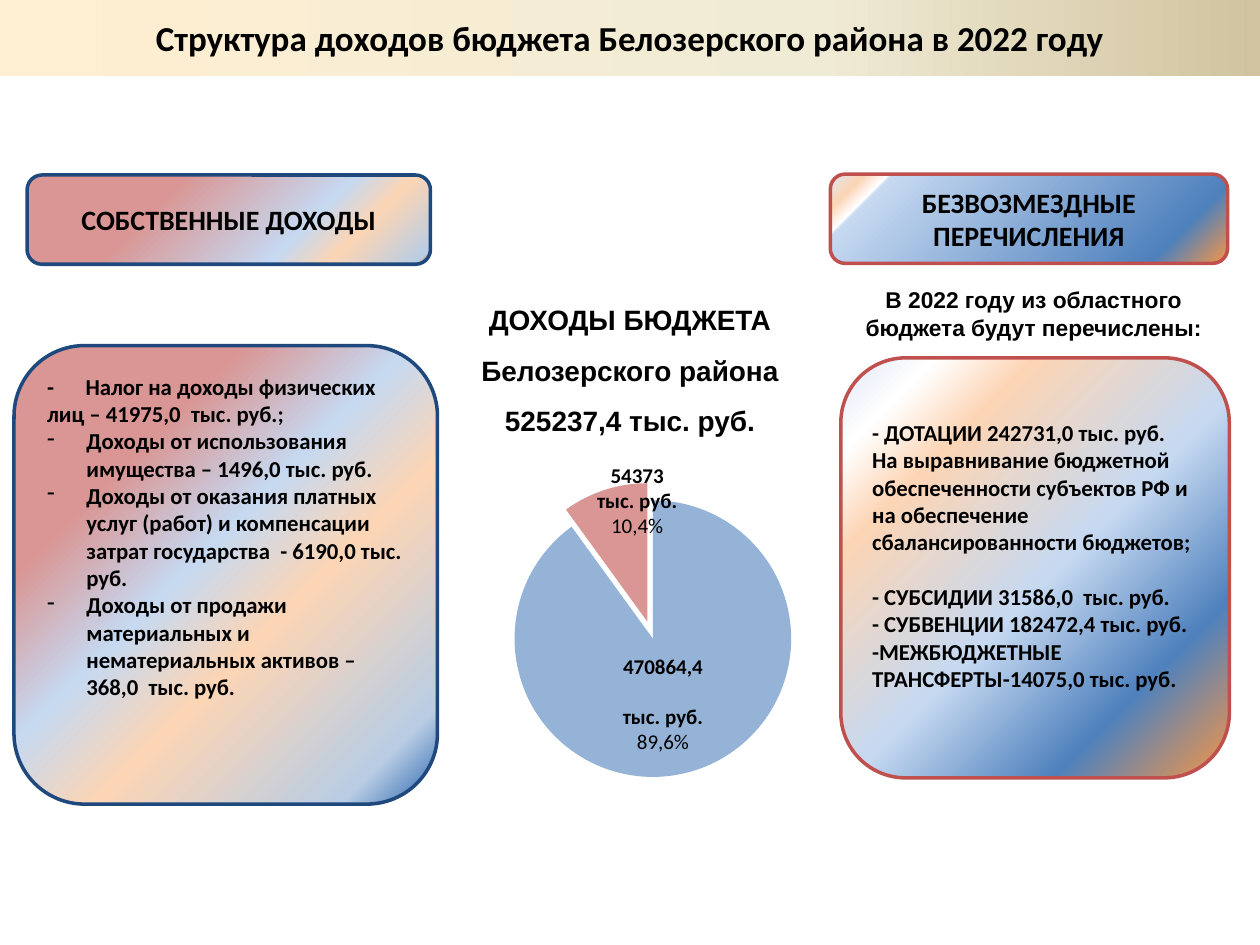
"""Builds the slide on the revenue structure of the district budget for 2022."""
import dataclasses

import lxml.etree
import pptx
import pptx.chart.data
import pptx.dml.color
import pptx.enum.chart
import pptx.enum.shapes
import pptx.enum.text
import pptx.oxml
import pptx.oxml.ns
import pptx.util

Pt = pptx.util.Pt
RGB = pptx.dml.color.RGBColor.from_string
ALIGN = pptx.enum.text.PP_ALIGN
ANCHOR = pptx.enum.text.MSO_ANCHOR
qn = pptx.oxml.ns.qn


@dataclasses.dataclass(frozen=True)
class Theme:
    text: str = "000000"
    own_line: str = "1F497D"
    grant_line: str = "C0504D"
    slices: tuple = ("95B3D7", "D99694")
    band: tuple = ((0, "FFEFD1"), (65, "F0EBD5"), (100, "D1C39F"))
    own_head: tuple = ((1, "4F81BD"), (2, "F79646"), (3, "B9CDE5"),
                       (21, "FCD5B5"), (33, "C6D9F1"), (68, "D99694"))
    own_body: tuple = ((0, "4F81BD"), (3, "4F81BD"), (11, "B9CDE5"),
                       (39, "FCD5B5"), (55, "C6D9F1"), (74, "D99694"))
    grant_head: tuple = ((0, "F79646"), (16, "4F81BD"), (87, "C6D9F1"),
                         (88, "FFFFFF"), (93, "FCD5B5"), (100, "E1E8F5"))
    grant_body: tuple = ((0, "F79646"), (22, "4F81BD"), (47, "C6D9F1"),
                         (76, "FCD5B5"), (88, "FFFFFF"), (100, "E1E8F5"))
    head_font: str = "Arial"
    body_font: str = "Calibri"
    title_size: int = 20
    head_size: int = 16
    body_size: int = 13
    label_size: int = 12


THEME = Theme()
OWN_INCOME = (
    "-\tНалог на доходы физических лиц – 41975,0  тыс. руб.;",
    "Доходы от использования имущества – 1496,0 тыс. руб.",
    "Доходы от оказания платных услуг (работ) и компенсации затрат "
    "государства  - 6190,0 тыс. руб.",
    "Доходы от продажи материальных и нематериальных активов – 368,0  тыс. руб.",
)
GRANTS = (
    "- ДОТАЦИИ 242731,0 тыс. руб.",
    "На выравнивание бюджетной обеспеченности субъектов РФ и на обеспечение "
    "сбалансированности бюджетов;",
    "- СУБСИДИИ 31586,0  тыс. руб.",
    "- СУБВЕНЦИИ 182472,4 тыс. руб.",
    "-МЕЖБЮДЖЕТНЫЕ ТРАНСФЕРТЫ-14075,0 тыс. руб.",
)


def style_font(font, size, name=THEME.body_font, bold=True):
    """Apply size, typeface, weight and the text colour to a font."""
    font.size, font.name, font.bold = Pt(size), name, bold
    font.color.rgb = RGB(THEME.text)


def write(sp, lines, size, name=THEME.body_font, align=ALIGN.CENTER):
    """Write one paragraph per line and return the paragraphs."""
    tf = sp.text_frame
    tf.word_wrap = True
    tf.text = "\n".join(lines)
    for p in tf.paragraphs:
        p.alignment = align
        for r in p.runs:
            style_font(r.font, size, name)
    return tf.paragraphs


def fill_gradient(sp, stops, angle):
    """Fill a shape with a linear gradient whose angle runs clockwise."""
    sp.fill.gradient()
    grad = sp._element.spPr.find(qn("a:gradFill"))
    gs_lst = grad.find(qn("a:gsLst"))
    for gs in list(gs_lst):
        gs_lst.remove(gs)
    for pos, color in stops:
        gs = lxml.etree.SubElement(gs_lst, qn("a:gs"), pos=str(pos * 1000))
        lxml.etree.SubElement(gs, qn("a:srgbClr"), val=color)
    grad.find(qn("a:lin")).set("ang", str(angle * 60000))


def add_title(s, text):
    """Turn the title placeholder into the band across the top."""
    sp = s.shapes.title
    sp.left, sp.top, sp.width, sp.height = Pt(0), Pt(-0.5), Pt(720), Pt(44)
    fill_gradient(sp, THEME.band, 0)
    write(sp, [text], THEME.title_size)
    sp.text_frame.vertical_anchor = ANCHOR.MIDDLE


def add_panel(s, box, stops, line, lines, size, align=ALIGN.CENTER, anchor=ANCHOR.MIDDLE):
    """Add a rounded gradient panel with text and return it."""
    sp = s.shapes.add_shape(pptx.enum.shapes.MSO_SHAPE.ROUNDED_RECTANGLE, *map(Pt, box))
    sp.shadow.inherit = False
    fill_gradient(sp, stops, 225)
    sp.line.color.rgb, sp.line.width = RGB(line), Pt(2)
    write(sp, lines, size, align=align)
    sp.text_frame.vertical_anchor = anchor
    return sp


def add_caption(s, box, lines, size, spacing=1.0):
    """Add a centred bold caption."""
    sp = s.shapes.add_textbox(*map(Pt, box))
    for p in write(sp, lines, size, THEME.head_font):
        p.line_spacing = spacing


def hang_dash(p, indent=22.5):
    """Give a paragraph a hanging dash bullet."""
    pPr = p._p.get_or_add_pPr()
    pPr.set("marL", str(Pt(indent)))
    pPr.set("indent", str(-Pt(indent)))
    lxml.etree.SubElement(pPr, qn("a:buChar"), char="-")


def add_tab(p, pos):
    """Set a left tab stop on a paragraph."""
    tabs = lxml.etree.SubElement(p._p.get_or_add_pPr(), qn("a:tabLst"))
    lxml.etree.SubElement(tabs, qn("a:tab"), pos=str(Pt(pos)), algn="l")


def manual_layout(**values):
    """Return a chart layout element with the given settings."""
    layout = lxml.etree.Element(qn("c:layout"))
    manual = lxml.etree.SubElement(layout, qn("c:manualLayout"))
    for tag, val in values.items():
        lxml.etree.SubElement(manual, qn(f"c:{tag}"), val=str(val))
    return layout


def label_slice(point, lines, dx, dy):
    """Label a slice with bold lines and a regular last line, shifted by a share."""
    label = point.data_label
    tf = label.text_frame
    tf.text = "\n".join(lines)
    for p in tf.paragraphs:
        for r in p.runs:
            style_font(r.font, THEME.label_size, bold=p.text != lines[-1])
    label.position = pptx.enum.chart.XL_LABEL_POSITION.CENTER
    label._dLbl.insert(1, manual_layout(x=dx, y=dy))


def add_pie(s, box):
    """Add the pie of transfers and own income."""
    data = pptx.chart.data.CategoryChartData()
    data.categories = ["1", "2"]
    data.add_series("Series 1", (90, 10))
    kind = pptx.enum.chart.XL_CHART_TYPE.PIE
    chart = s.shapes.add_chart(kind, *map(Pt, box), data).chart
    chart.has_legend = chart.has_title = False
    style_font(chart.font, THEME.label_size, bold=False)
    area = chart._chartSpace.chart.plotArea
    for old in area.findall(qn("c:layout")):
        area.remove(old)
    area.insert(0, manual_layout(layoutTarget="inner", xMode="edge", yMode="edge",
                                 x=0.2, y=0.09, w=0.7, h=0.68))
    plot = chart.plots[0]
    plot.vary_by_categories = True
    points = plot.series[0].points
    for i, color in enumerate(THEME.slices):
        points[i].format.fill.solid()
        points[i].format.fill.fore_color.rgb = RGB(color)
    dPt = points[1]._element.findall(".//" + qn("c:dPt"))[1]
    explosion = lxml.etree.Element(qn("c:explosion"), val="13")
    dPt.find(qn("c:spPr")).addprevious(explosion)
    label_slice(points[0], ("470864,4", "", "тыс. руб.", "89,6%"), -0.02, 0)
    label_slice(points[1], ("54373", "тыс. руб.", "10,4%"), 0.02, -0.14)


def main():
    """Build and save the slide."""
    prs = pptx.Presentation()
    prs.slide_width, prs.slide_height = Pt(720), Pt(540)
    s = prs.slides.add_slide(prs.slide_layouts[5])
    add_title(s, "Структура доходов бюджета Белозерского района в 2022 году")
    add_pie(s, (196, 265, 322, 232.5))
    grants = add_panel(s, (480.5, 204.5, 222, 240), THEME.grant_body, THEME.grant_line,
                       GRANTS, THEME.body_size, ALIGN.LEFT, ANCHOR.TOP)
    grants.text_frame.margin_top = Pt(24)
    grants.text_frame.paragraphs[2].space_before = Pt(15.6)
    add_panel(s, (474.5, 99.5, 227, 51), THEME.grant_head, THEME.grant_line,
              ["БЕЗВОЗМЕЗДНЫЕ ПЕРЕЧИСЛЕНИЯ"], THEME.head_size)
    add_caption(s, (479.5, 160, 222, 39),
                ["В 2022 году из областного бюджета будут перечислены:"], THEME.body_size)
    add_caption(s, (245, 160, 230, 94),
                ["ДОХОДЫ БЮДЖЕТА Белозерского района", "525237,4 тыс. руб."],
                THEME.head_size, 1.5)
    add_panel(s, (15.5, 100, 230.5, 51), THEME.own_head, THEME.own_line,
              ["СОБСТВЕННЫЕ ДОХОДЫ"], THEME.head_size)
    own = add_panel(s, (8, 197.5, 242, 262), THEME.own_body, THEME.own_line,
                    OWN_INCOME, THEME.body_size, ALIGN.LEFT, ANCHOR.TOP)
    first, *rest = own.text_frame.paragraphs
    add_tab(first, 22)
    for p in rest:
        hang_dash(p)
    prs.save("out.pptx")


if __name__ == "__main__":
    main()
